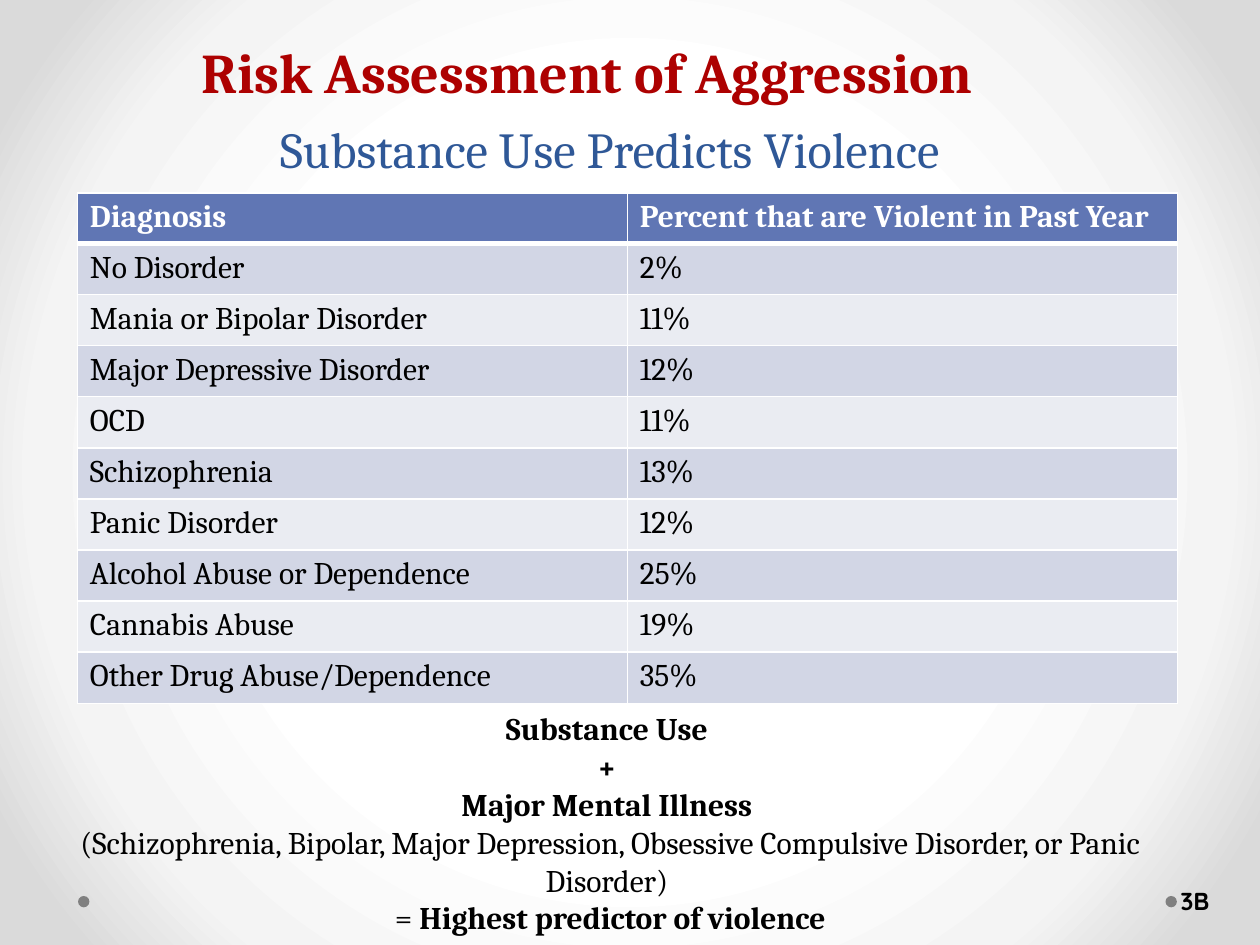
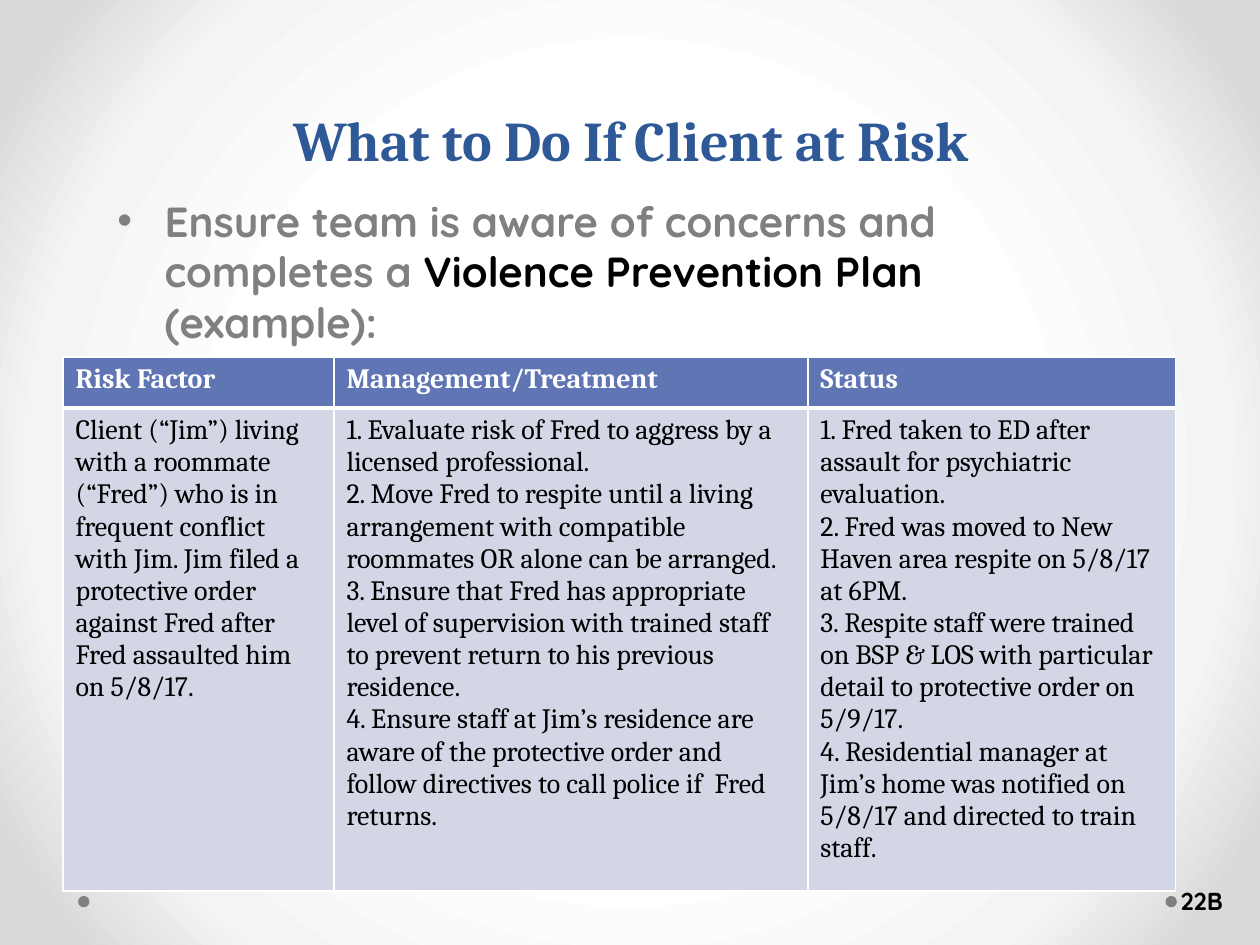
import pptx
import pptx.util
import pptx.dml.color
import pptx.enum.shapes
import pptx.enum.text
import pptx.oxml
import pptx.oxml.ns
from lxml import etree

Pt = pptx.util.Pt
ANCHOR = pptx.enum.text.MSO_ANCHOR
CENTER = pptx.enum.text.PP_ALIGN.CENTER
SERIF, SANS = "Cambria", "Quicksand"
WHITE, BLACK, GRAY = "FFFFFF", "000000", "808080"
BLUE, RED, HEADER = "2F5897", "AD0101", "6076B4"
BANDS = ["D2D6E5", "EAECF2"]
BACKDROP = [(50, "FFFFFF"), (76, "F4F4F4"), (92, "DADADA")]


def rgb(color):
    return pptx.dml.color.RGBColor.from_string(color)


class Deck:
    def __init__(self):
        self.prs = pptx.Presentation()
        self.prs.slide_width, self.prs.slide_height = Pt(720), Pt(540)
        self.backdrop()

    def backdrop(self):
        """Radial gradient on the master, shared by all slides."""
        fill = self.prs.slide_master.background.fill
        fill.gradient()
        stops = "".join(
            f'<a:gs pos="{pos * 1000}"><a:srgbClr val="{color}"/></a:gs>'
            for pos, color in BACKDROP)
        new = pptx.oxml.parse_xml(
            f'<a:gradFill {pptx.oxml.ns.nsdecls("a")} rotWithShape="1">'
            f'<a:gsLst>{stops}</a:gsLst><a:path path="circle">'
            '<a:fillToRect l="50000" t="50000" r="50000" b="50000"/>'
            '</a:path></a:gradFill>')
        master = self.prs.slide_master.element
        old = master.find(".//" + pptx.oxml.ns.qn("p:bgPr")).find(
            pptx.oxml.ns.qn("a:gradFill"))
        old.getparent().replace(old, new)

    def slide(self, layout, number):
        self.s = self.prs.slides.add_slide(self.prs.slide_layouts[layout])
        # Footer: two dots and the page label
        for left in (666, 44.6):
            dot = self.s.shapes.add_shape(
                pptx.enum.shapes.MSO_SHAPE.OVAL,
                Pt(left), Pt(512), Pt(6.5), Pt(6.5))
            dot.shadow.inherit = False
            dot.fill.solid()
            dot.fill.fore_color.rgb = rgb(GRAY)
            dot.line.fill.background()
        tf = self.text((672.5, 500.4, 44, 28.8), [number], name=SANS,
                       size=14, bold=True)
        tf.vertical_anchor = ANCHOR.MIDDLE
        tf.margin_left = Pt(2.16)

    def put(self, tf, paras, align=None, **base):
        """Each paragraph is a string or a list of (text, format) runs."""
        for i, para in enumerate(paras):
            p = tf.add_paragraph() if i else tf.paragraphs[0]
            p.alignment = align
            for text, extra in [(para, {})] if isinstance(para, str) else para:
                r = p.add_run()
                r.text = text
                fmt = {"name": SERIF, "bold": False, "color": BLACK,
                       **base, **extra}
                r.font.color.rgb = rgb(fmt.pop("color"))
                fmt["size"] = Pt(fmt["size"])
                for key, value in fmt.items():
                    setattr(r.font, key, value)

    def text(self, box, paras, **fmt):
        tf = self.s.shapes.add_textbox(*map(Pt, box)).text_frame
        tf.word_wrap = True
        self.put(tf, paras, **fmt)
        return tf

    def placeholder(self, index, box, paras, **fmt):
        sp = self.s.placeholders[index]
        sp.left, sp.top, sp.width, sp.height = map(Pt, box)
        tf = sp.text_frame
        tf.auto_size = pptx.enum.text.MSO_AUTO_SIZE.NONE
        self.put(tf, paras, **fmt)
        return tf

    def title(self, box, text, **fmt):
        tf = self.placeholder(0, box, [text], align=CENTER, color=BLUE, **fmt)
        tf.vertical_anchor = ANCHOR.BOTTOM
        tf.paragraphs[0].line_spacing = Pt(58)

    def borders(self, cell, **widths):
        tc_pr = cell._tc.get_or_add_tcPr()
        for side in "LRTB":
            ln = etree.SubElement(tc_pr, pptx.oxml.ns.qn(f"a:ln{side}"),
                                  w=str(Pt(widths.get(side, 1))))
            fill = etree.SubElement(ln, pptx.oxml.ns.qn("a:solidFill"))
            etree.SubElement(fill, pptx.oxml.ns.qn("a:srgbClr"), val=WHITE)

    def table(self, left, top, widths, heights, rows, size):
        table = self.s.shapes.add_table(
            len(rows), len(widths), Pt(left), Pt(top),
            Pt(sum(widths)), Pt(sum(heights))).table
        for col, width in zip(table.columns, widths):
            col.width = Pt(width)
        for i, (row, height) in enumerate(zip(rows, heights)):
            table.rows[i].height = Pt(height)
            for j, paras in enumerate(row):
                cell = table.cell(i, j)
                # Thick rule between the header and the first body row
                self.borders(cell, **{0: {"B": 3}, 1: {"T": 3}}.get(i, {}))
                cell.fill.solid()
                cell.fill.fore_color.rgb = rgb(
                    BANDS[(i - 1) % 2] if i else HEADER)
                if isinstance(paras, str):
                    paras = [paras]
                self.put(cell.text_frame, paras, size=size, bold=i == 0,
                         color=BLACK if i else WHITE)


def violence_slide(deck):
    deck.slide(5, "3B")
    deck.title((61.2, 64, 574.5, 41.8), "Substance Use Predicts Violence",
               size=28.8)
    deck.text((108, 18, 500.4, 46), ["Risk Assessment of Aggression"],
              size=32, bold=True, color=RED)

    # Rates by diagnosis
    rates = [
        ("Diagnosis", "Percent that are Violent in Past Year"),
        ("No Disorder", "2%"),
        ("Mania or Bipolar Disorder", "11%"),
        ("Major Depressive Disorder", "12%"),
        ("OCD", "11%"),
        ("Schizophrenia", "13%"),
        ("Panic Disorder", "12%"),
        ("Alcohol Abuse or Dependence", "25%"),
        ("Cannabis Abuse", "19%"),
        ("Other Drug Abuse/Dependence", "35%"),
    ]
    deck.table(44.2, 110.3, [314.3] * 2, [28] + [29.2] * 9, rates, 18)

    # Conclusion
    strong = {"bold": True}
    deck.text((30.2, 401.8, 637.2, 138.2), [
        [("Substance Use ", strong)],
        [("+ ", strong)],
        [("Major Mental Illness ", strong)],
        "(Schizophrenia, Bipolar, Major Depression, Obsessive Compulsive "
        "Disorder, or Panic Disorder) ",
        [("= ", {}), ("Highest predictor of violence", strong)],
    ], align=CENTER, size=18)


def plan_slide(deck):
    deck.slide(1, "22B")
    deck.title((84.2, 12.2, 553, 90), "What to Do If Client at Risk",
               size=32, bold=True)
    deck.placeholder(1, (59.8, 108, 600, 276.5), [[
        ("Ensure team is aware of concerns and completes a ", {}),
        ("Violence Prevention Plan ", {"color": BLACK}),
        ("(example):", {}),
    ]], name=SANS, size=24, bold=True, color=GRAY)

    # Example plan
    factor = ("Client (“Jim”) living with a roommate (“Fred”) who is in "
              "frequent conflict with Jim. Jim filed a protective order "
              "against Fred after Fred assaulted him on 5/8/17.")
    treatment = [
        "1. Evaluate risk of Fred to aggress by a licensed professional.",
        "2. Move Fred to respite until a living arrangement with compatible "
        "roommates OR alone can be arranged.",
        "3. Ensure that Fred has appropriate level of supervision with "
        "trained staff to prevent return to his previous residence.",
        "4. Ensure staff at Jim’s residence are aware of the protective "
        "order and follow directives to call police if  Fred returns.",
    ]
    status = [
        "1. Fred taken to ED after assault for psychiatric evaluation.",
        "2. Fred was moved to New Haven area respite on 5/8/17 at 6PM.",
        "3. Respite staff were trained on BSP & LOS with particular detail "
        "to protective order on 5/9/17.",
        "4. Residential manager at Jim’s home was notified on 5/8/17 and "
        "directed to train staff.",
    ]
    deck.table(36, 204, [154.8, 270.8, 210.2], [29.2, 264],
               [("Risk Factor", "Management/Treatment", "Status"),
                (factor, treatment, status)], 16)


def main():
    deck = Deck()
    violence_slide(deck)
    plan_slide(deck)
    deck.prs.save("out.pptx")


if __name__ == "__main__":
    main()
